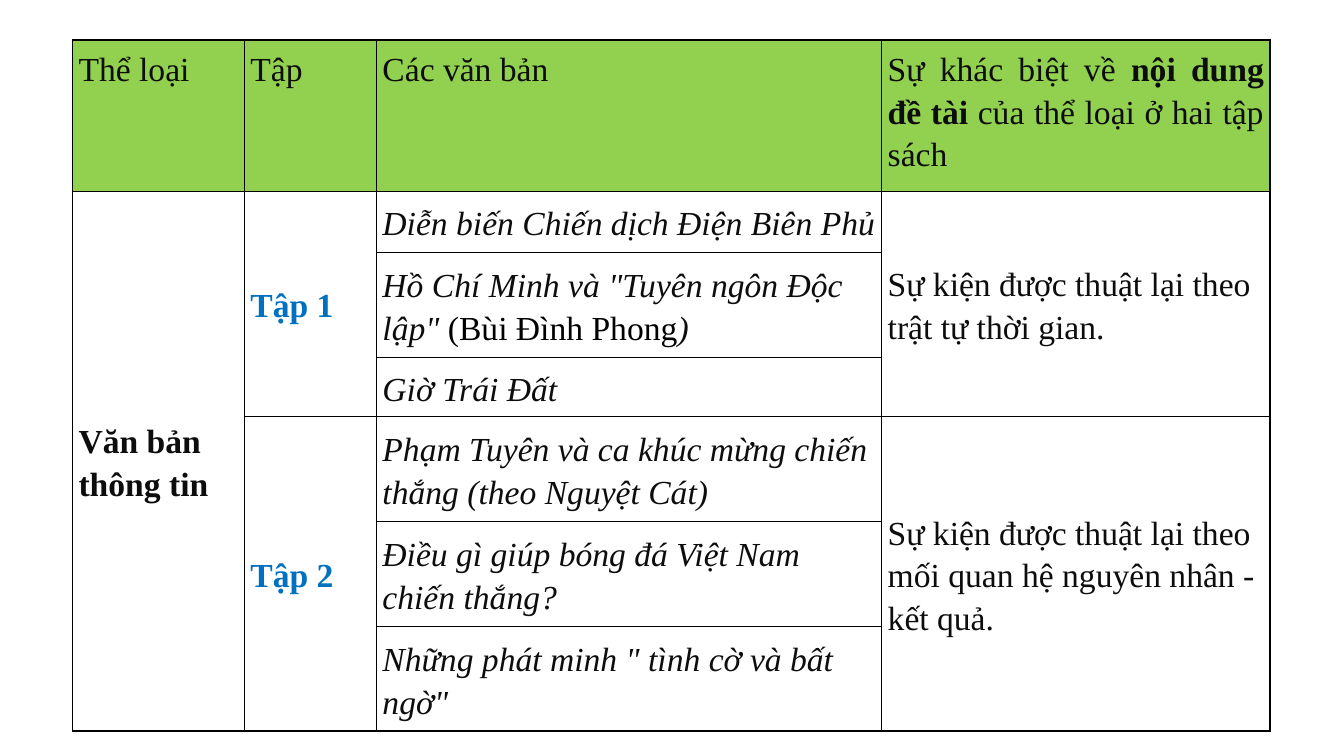
from dataclasses import dataclass

from lxml import etree
from pptx import Presentation
from pptx.dml.color import RGBColor
from pptx.enum.text import MSO_ANCHOR, PP_ALIGN
from pptx.oxml.ns import qn
from pptx.table import Table, _Cell
from pptx.util import Pt

LEFT, JUSTIFY = PP_ALIGN.LEFT, PP_ALIGN.JUSTIFY
TOP, MIDDLE = MSO_ANCHOR.TOP, MSO_ANCHOR.MIDDLE


@dataclass(frozen=True)
class Theme:
    font: str = "Times New Roman"
    size: float = 24
    text: str = "0D0D0D"
    black: str = "000000"
    blue: str = "0070C0"
    green: str = "92D050"
    border: float = 1
    inset: float = 4.3
    line_spacing: float = 1.15
    space_after: float = 10


THEME = Theme()


@dataclass(frozen=True)
class Run:
    text: str
    bold: bool = False
    italic: bool = False
    color: str = THEME.text


@dataclass(frozen=True)
class Entry:
    row: int
    col: int
    runs: tuple[Run, ...]
    rows: int = 1


TABLE_LEFT, TABLE_TOP = 51.84, 28.6
COL_WIDTHS = (122.8, 94.3, 360.9, 277.3)
ROW_HEIGHTS = (108, 43.6, 75.3, 41.8, 75, 75, 75)
ROWS_PER_VOLUME = 3

HEADERS = (
    (Run("Thể loại"),),
    (Run("Tập"),),
    (Run("Các văn bản"),),
    (
        Run("Sự khác biệt về "),
        Run("nội dung đề tài", bold=True),
        Run(" của thể loại ở hai tập sách"),
    ),
)
GENRE = "Văn bản thông tin"
VOLUMES = (
    ("Tập 1", "Sự kiện được thuật lại theo trật tự thời gian."),
    ("Tập 2", "Sự kiện được thuật lại theo mối quan hệ nguyên nhân - kết quả."),
)
READINGS = (
    (Run("Diễn biến Chiến dịch Điện Biên Phủ", italic=True),),
    (
        Run('Hồ Chí Minh và "Tuyên ngôn Độc lập" ', italic=True),
        Run("(Bùi Đình Phong", color=THEME.black),
        Run(")", italic=True),
    ),
    (Run("Giờ Trái Đất", italic=True),),
    (Run("Phạm Tuyên và ca khúc mừng chiến thắng (theo Nguyệt Cát)", italic=True),),
    (Run("Điều gì giúp bóng đá Việt Nam chiến thắng?", italic=True),),
    (Run('Những phát minh " tình cờ và bất ngờ"', italic=True),),
)


def table_entries() -> list[Entry]:
    entries = [Entry(0, col, runs) for col, runs in enumerate(HEADERS)]
    entries.append(Entry(1, 0, (Run(GENRE, bold=True),), len(READINGS)))
    for i, (volume, difference) in enumerate(VOLUMES):
        row = 1 + i * ROWS_PER_VOLUME
        name = Run(volume, bold=True, color=THEME.blue)
        entries.append(Entry(row, 1, (name,), ROWS_PER_VOLUME))
        entries.append(Entry(row, 3, (Run(difference),), ROWS_PER_VOLUME))
    entries += [Entry(row, 2, runs) for row, runs in enumerate(READINGS, start=1)]
    return entries


def set_borders(cell: _Cell) -> None:
    tc_pr = cell._tc.get_or_add_tcPr()
    for i, side in enumerate(("a:lnL", "a:lnR", "a:lnT", "a:lnB")):
        ln = etree.Element(qn(side), w=str(Pt(THEME.border)))
        fill = etree.SubElement(ln, qn("a:solidFill"))
        etree.SubElement(fill, qn("a:srgbClr"), val=THEME.black)
        tc_pr.insert(i, ln)


def format_cell(cell: _Cell, header: bool) -> None:
    if header:
        cell.fill.solid()
        cell.fill.fore_color.rgb = RGBColor.from_string(THEME.green)
    else:
        cell.fill.background()
    cell.margin_left = cell.margin_right = Pt(THEME.inset)
    cell.margin_top = cell.margin_bottom = Pt(THEME.inset)
    cell.vertical_anchor = TOP if header else MIDDLE
    set_borders(cell)


def write_entry(table: Table, entry: Entry) -> None:
    cell = table.cell(entry.row, entry.col)
    if entry.rows > 1:
        cell.merge(table.cell(entry.row + entry.rows - 1, entry.col))
    header = entry.row == 0
    p = cell.text_frame.paragraphs[0]
    p.alignment = JUSTIFY if header else LEFT
    p.line_spacing = THEME.line_spacing
    p.space_after = Pt(0 if header else THEME.space_after)
    for run in entry.runs:
        r = p.add_run()
        r.text = run.text
        r.font.name = THEME.font
        r.font.size = Pt(THEME.size)
        r.font.bold = run.bold
        r.font.italic = run.italic
        r.font.color.rgb = RGBColor.from_string(run.color)


def main() -> None:
    prs = Presentation()
    prs.slide_width, prs.slide_height = Pt(960), Pt(540)
    s = prs.slides.add_slide(prs.slide_layouts[6])
    table = s.shapes.add_table(
        len(ROW_HEIGHTS), len(COL_WIDTHS), Pt(TABLE_LEFT), Pt(TABLE_TOP),
        Pt(sum(COL_WIDTHS)), Pt(sum(ROW_HEIGHTS)),
    ).table
    table.first_row = table.horz_banding = False
    for column, width in zip(table.columns, COL_WIDTHS):
        column.width = Pt(width)
    for i, (row, height) in enumerate(zip(table.rows, ROW_HEIGHTS)):
        row.height = Pt(height)
        for cell in row.cells:
            format_cell(cell, header=i == 0)
    for entry in table_entries():
        write_entry(table, entry)
    prs.save("out.pptx")


if __name__ == "__main__":
    main()
